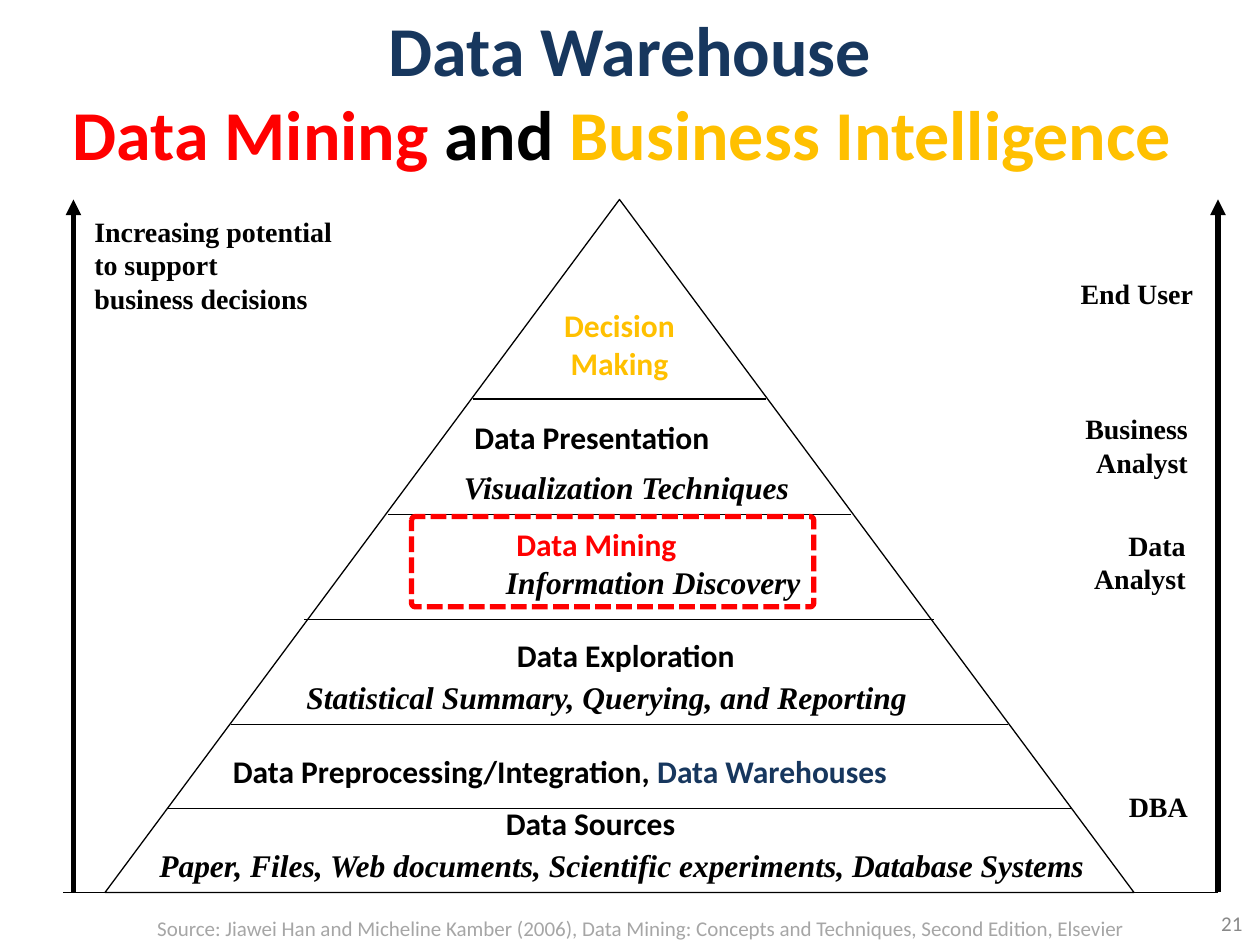
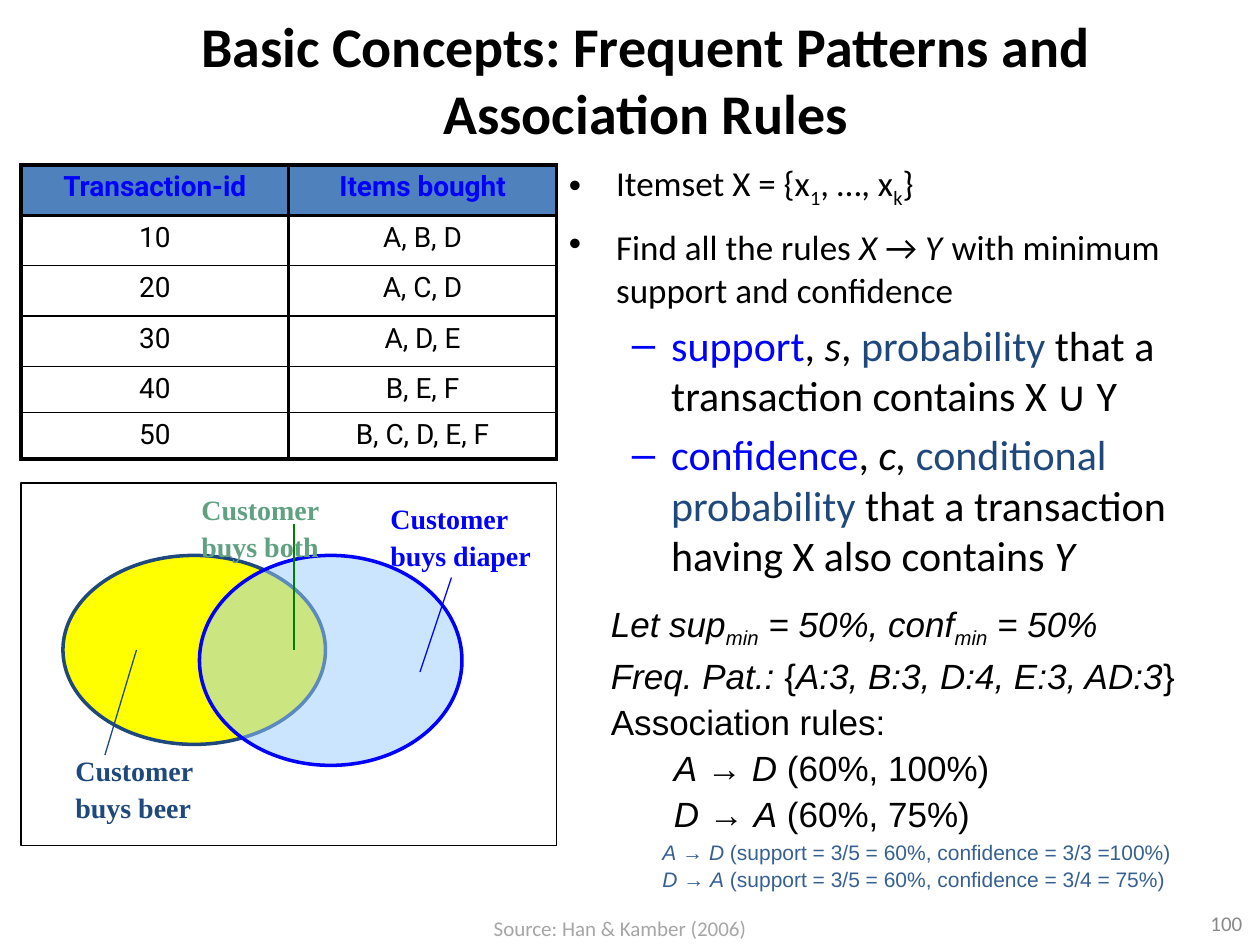
"""Build two slides on data mining: the decision pyramid and the association rules."""
from dataclasses import dataclass, field
from typing import Any, NamedTuple

from lxml import etree
from pptx import Presentation
from pptx.dml.color import RGBColor
from pptx.enum.dml import MSO_LINE
from pptx.enum.shapes import MSO_CONNECTOR, MSO_SHAPE
from pptx.enum.text import MSO_ANCHOR, PP_ALIGN
from pptx.oxml.ns import qn
from pptx.util import Inches, Pt

LEFT, CENTER, RIGHT = PP_ALIGN.LEFT, PP_ALIGN.CENTER, PP_ALIGN.RIGHT
TOP, MIDDLE = MSO_ANCHOR.TOP, MSO_ANCHOR.MIDDLE
STRAIGHT, DASHED = MSO_CONNECTOR.STRAIGHT, MSO_LINE.SQUARE_DOT
TRIANGLE, ELLIPSE = MSO_SHAPE.FLOWCHART_EXTRACT, MSO_SHAPE.OVAL
RECTANGLE, ROUNDED = MSO_SHAPE.RECTANGLE, MSO_SHAPE.ROUNDED_RECTANGLE

WIDTH, HEIGHT = Inches(10), Inches(7.5)
COLUMNS, ROWS = 120, 90
BLACK, RED, BLUE, GOLD = "000000", "FF0000", "0000FF", "FFC000"
NAVY, SLATE, GREEN, SAGE = "17375E", "1F497D", "008000", "5FA180"
STEEL, HEADER, YELLOW, SKY = "376092", "4F81BD", "FFFF00", "99CCFF"
NUMBER_GREY, SOURCE_GREY = "898989", "A6A6A6"

TITLE = {"name": "Calibri", "bold": True, "color": BLACK}
STAGE = {**TITLE, "size": Pt(18)}
DETAIL = {**STAGE, "name": "Times New Roman", "italic": True}
ROLE = {**DETAIL, "italic": False, "size": Pt(16)}
BODY = {"name": "Calibri", "size": Pt(24), "color": BLACK}
SMALL = {"size": Pt(20)}
FORMULA = {"name": "Arial", "size": Pt(20), "color": BLACK}
FOOTER = {"name": "Calibri", "size": Pt(12)}
LOOSE = {"line_spacing": 1.1}
SPACED = {"space_before": Pt(5)}


class Box(NamedTuple):
    """A place on the grid, in columns and rows."""
    left: float
    top: float
    width: float
    height: float


class Run(NamedTuple):
    """A stretch of text and what differs from the style of its box."""
    text: str
    format: dict[str, Any] = {}


@dataclass
class Line:
    """A paragraph with its layout; margin and indent are in columns."""
    runs: list[Run]
    format: dict[str, Any] = field(default_factory=dict)
    margin: float = 0
    indent: float = 0
    bullet: str = ""


@dataclass
class Label:
    """A text box whose lines share one style."""
    box: Box
    lines: list[Line]
    style: dict[str, Any]
    alignment: Any = LEFT
    anchor: Any = TOP


@dataclass
class Figure:
    """A preset shape with its outline and optional fill."""
    kind: Any
    box: Box
    line: str = BLACK
    weight: float = 0.75
    fill: str = ""
    opacity: int = 100


def column(count: float) -> int:
    """Return the width of a number of grid columns."""
    return round(WIDTH * count / COLUMNS)


def row(count: float) -> int:
    """Return the height of a number of grid rows."""
    return round(HEIGHT * count / ROWS)


def place(box: Box) -> tuple[int, int, int, int]:
    """Turn a grid box into slide lengths."""
    return column(box.left), row(box.top), column(box.width), row(box.height)


def paint(fill: Any, color: str) -> None:
    """Give a fill one solid colour."""
    fill.solid()
    fill.fore_color.rgb = RGBColor.from_string(color)


def mixed(source: str, base: dict[str, Any] = {}) -> list[Run]:
    """Split text into runs, where * encloses italics and _ encloses subscripts."""
    return [Run(text, {**base, "italic": bool(slant % 2), "baseline": -25000 * (drop % 2)})
            for slant, part in enumerate(source.split("*"))
            for drop, text in enumerate(part.split("_")) if text]


def plain(*texts: str, **layout: Any) -> list[Line]:
    """Make one unmixed line for each text."""
    return [Line([Run(text)], layout) for text in texts]


def write_run(paragraph: Any, run: Run, style: dict[str, Any]) -> None:
    """Add a run in the box style and its own format, or a line break."""
    if run.text == "\n":
        paragraph.add_line_break()
        return
    piece = paragraph.add_run()
    piece.text = run.text
    for name, value in {**style, **run.format}.items():
        if name == "color":
            paint(piece.font.fill, value)
        elif name == "baseline":
            piece._r.get_or_add_rPr().set(name, str(value))
        else:
            setattr(piece.font, name, value)


def write_lines(frame: Any, lines: list[Line], style: dict[str, Any], alignment: Any) -> None:
    """Fill a text frame with formatted lines."""
    for index, line in enumerate(lines):
        paragraph = frame.add_paragraph() if index else frame.paragraphs[0]
        for name, value in {"alignment": alignment, **line.format}.items():
            setattr(paragraph, name, value)
        properties = paragraph._p.get_or_add_pPr()
        properties.set("marL", str(column(line.margin)))
        properties.set("indent", str(column(line.indent)))
        if line.bullet:
            etree.SubElement(properties, qn("a:buFont"), typeface="Arial")
            etree.SubElement(properties, qn("a:buChar"), char=line.bullet)
        for run in line.runs:
            write_run(paragraph, run, style)


def draw_label(slide: Any, label: Label) -> None:
    """Draw a text box."""
    frame = slide.shapes.add_textbox(*place(label.box)).text_frame
    frame.word_wrap, frame.vertical_anchor = True, label.anchor
    write_lines(frame, label.lines, label.style, label.alignment)


def draw_figure(slide: Any, figure: Figure) -> Any:
    """Draw a preset shape and return it."""
    shape = slide.shapes.add_shape(figure.kind, *place(figure.box))
    shape.shadow.inherit = False
    shape.fill.background()
    if figure.fill:
        paint(shape.fill, figure.fill)
        tint = shape._element.spPr.find(".//" + qn("a:srgbClr"))
        etree.SubElement(tint, qn("a:alpha"), val=str(figure.opacity * 1000))
    paint(shape.line.fill, figure.line)
    shape.line.width = Pt(figure.weight)
    return shape


def draw_stroke(slide: Any, start: tuple[float, float], end: tuple[float, float],
                color: str = BLACK, weight: float = 0.75, arrow: bool = False) -> None:
    """Draw a straight line, with an arrowhead at its end if asked."""
    connector = slide.shapes.add_connector(
        STRAIGHT, column(start[0]), row(start[1]), column(end[0]), row(end[1]))
    paint(connector.line.fill, color)
    connector.line.width = Pt(weight)
    if arrow:
        etree.SubElement(connector.line._get_or_add_ln(), qn("a:tailEnd"), type="triangle")
    etree.SubElement(connector._element.spPr, qn("a:effectLst"))


def draw_frame(slide: Any, title: Label, number: str, source: str, source_left: float) -> None:
    """Draw the title, the slide number and the source line."""
    number_style, source_style = ({**FOOTER, "color": grey} for grey in (NUMBER_GREY, SOURCE_GREY))
    for label in (title, Label(Box(91.5, 85.5, 28, 4.8), plain(number), number_style, RIGHT, MIDDLE),
                  Label(Box(source_left, 86.6, 98.5, 3.6), plain(source), source_style, CENTER)):
        draw_label(slide, label)


def draw_table(slide: Any, box: Box, records: list[tuple[str, str]], heights: list[float]) -> None:
    """Draw the transactions with heavy rules around the header and the table."""
    table = slide.shapes.add_table(len(records), len(records[0]), *place(box)).table
    for index, (record, height) in enumerate(zip(records, heights)):
        table.rows[index].height = row(height)
        top, bottom = (2.25 if rule in (0, 1, len(records)) else 1 for rule in (index, index + 1))
        style = {"name": "Roboto", "size": Pt(16), "bold": index == 0, "color": BLACK if index else BLUE}
        for cell, text in zip(table.rows[index].cells, record):
            properties = cell._tc.get_or_add_tcPr()
            for side, weight in {"L": 2.25, "R": 2.25, "T": top, "B": bottom}.items():
                border = etree.SubElement(properties, qn("a:ln" + side), w=str(Pt(weight)))
                etree.SubElement(etree.SubElement(border, qn("a:solidFill")), qn("a:srgbClr"), val=BLACK)
            cell.fill.background()
            if index == 0:
                paint(cell.fill, HEADER)
            write_lines(cell.text_frame, plain(text), style, CENTER)


def build_pyramid(slide: Any) -> None:
    """Build the pyramid from data sources up to decisions."""
    title = Line([Run("Data Warehouse", {"color": NAVY}), Run("\n"), Run("Data Mining ", {"color": RED}),
                  Run("and "), Run("Business Intelligence ", {"color": GOLD})])
    draw_frame(slide, Label(Box(3, 2.5, 114, 12.2), [title], {**TITLE, "size": Pt(40)}, CENTER, MIDDLE),
               "21", "Source: Jiawei Han and Micheline Kamber (2006), Data Mining: "
               "Concepts and Techniques, Second Edition, Elsevier", 11.8)
    pyramid = Box(10, 19, 98, 66)
    base = pyramid.top + pyramid.height
    apex = pyramid.left + pyramid.width / 2
    draw_figure(slide, Figure(TRIANGLE, pyramid))
    for level in (77, 69, 59, 49, 38):
        half = (level - pyramid.top) / pyramid.height * pyramid.width / 2
        draw_stroke(slide, (round(apex - half), level), (round(apex + half), level))
    for axis in (7, 116):
        draw_stroke(slide, (axis, base), (axis, pyramid.top), weight=3, arrow=True)
    draw_stroke(slide, (6, base), (116, base))

    support = plain("Increasing potential", "to support", "business decisions")
    draw_label(slide, Label(Box(7.8, 19.8, 26, 10.8), support, ROLE))
    for right, top, role in ((114.8, 25.7, ["End User"]), (114.3, 38.6, ["Business", "Analyst"]),
                             (114.1, 49.7, ["Data", "Analyst"]), (114.3, 74.6, ["DBA"])):
        draw_label(slide, Label(Box(right - 15, top, 15, 4 * len(role)), plain(*role), ROLE, RIGHT))
    for box, text, style in (
            (Box(44, 39.2, 30, 4.8), "Data Presentation", STAGE),
            (Box(43, 44, 35, 4.8), "Visualization Techniques", DETAIL),
            (Box(48, 49.4, 23.4, 4.8), "Data Mining", {**STAGE, "color": RED}),
            (Box(47, 53, 31, 4.8), "Information Discovery", DETAIL),
            (Box(28, 64, 60, 4.8), "Statistical Summary, Querying, and Reporting", DETAIL),
            (Box(47, 76, 23, 4.8), "Data Sources", STAGE),
            (Box(14, 80, 93.4, 4.8),
             "Paper, Files, Web documents, Scientific experiments, Database Systems", DETAIL)):
        draw_label(slide, Label(box, plain(text), style))
    decision = {**STAGE, "color": GOLD}
    draw_label(slide, Label(Box(51, 28.6, 16, 8.4), plain("Decision Making"), decision, CENTER))
    draw_label(slide, Label(Box(44.2, 60, 30.8, 4.8), plain("Data Exploration"), STAGE, CENTER))
    warehouses = [Run("Data Preprocessing/Integration, "), Run("Data Warehouses", {"color": NAVY})]
    draw_label(slide, Label(Box(21, 71, 66, 4.8), [Line(warehouses)], STAGE))
    highlight = draw_figure(slide, Figure(ROUNDED, Box(39.2, 49.2, 38.3, 8.6), RED, 3))
    highlight.adjustments[0] = 0.04
    highlight.line.dash_style = DASHED


def build_rules(slide: Any) -> None:
    """Build the table, the Venn diagram and the definitions."""
    title = plain("Basic Concepts: Frequent Patterns and Association Rules")
    draw_frame(slide, Label(Box(9, 1.5, 105, 12), title, {**TITLE, "size": Pt(32)}, CENTER, MIDDLE),
               "100", "Source: Han & Kamber (2006)", 9.8)
    blue, slate = {"color": BLUE}, {"color": SLATE}
    bullet = {"margin": 4.5, "indent": -4.5, "bullet": "•"}
    dash = {"margin": 9.75, "indent": -3.75, "bullet": "–"}
    definitions = [
        Line(mixed("Itemset X = {x_1_, …, x_k_}", SMALL), **bullet),
        Line([*mixed("Find all the rules *X* → *Y*", SMALL), Run(" "),
              Run("with minimum support and confidence", SMALL)], SPACED, **bullet),
        Line([Run("support", blue), *mixed(", *s*, "), Run("probability", slate),
              Run(" that a transaction contains X ∪ Y")], SPACED, **dash),
        Line([Run("confidence", blue), *mixed(", *c,* "), Run("conditional probability", slate),
              *mixed(" that a transaction having X also contains *Y*")], SPACED, **dash)]
    results = [Line(mixed(text), LOOSE, margin) for text, margin in (
        ("*Let sup_min_ = 50%, conf_min_ = 50%*", 0),
        ("*Freq. Pat.:* {*A:3, B:3, D:4, E:3, AD:3*}", 0), ("Association rules:", 0),
        ("*A* → *D* (60%, 100%)", 6), ("*D* → *A* (60%, 75%)", 6))]
    workings = [Line(mixed(text), LOOSE) for text in (
        "*A* → *D* (support = 3/5 = 60%, confidence = 3/3 =100%)",
        "*D* → *A* (support = 3/5 = 60%, confidence = 3/4 = 75%)")]
    for box, lines, style in ((Box(53, 14.8, 65, 42), definitions, BODY),
                              (Box(57, 56.3, 60, 22), results, FORMULA),
                              (Box(61.9, 79.1, 55.8, 6.2), workings,
                               {**FORMULA, "size": Pt(12), "color": STEEL})):
        draw_label(slide, Label(box, lines, style))

    for figure in (Figure(ELLIPSE, Box(6, 52.9, 25, 18), SLATE, 2, YELLOW),
                   Figure(ELLIPSE, Box(19, 52.9, 25, 20), BLUE, 2, SKY, 50),
                   Figure(RECTANGLE, Box(2, 46, 51, 34.5))):
        draw_figure(slide, figure)
    for left, top, purchase, color, start, end, stroke in (
            (36, 46.9, "buys diaper", BLUE, (40, 64), (43, 55), BLUE),
            (18, 46, "buys both", SAGE, (28, 61.9), (28, 49.9), GREEN),
            (6, 70.9, "buys beer", SLATE, (13, 61.9), (10, 71.9), SLATE)):
        draw_stroke(slide, start, end, stroke)
        draw_label(slide, Label(Box(left, top, 16.5, 8.3), plain("Customer", purchase, **LOOSE),
                                {**ROLE, "color": color}))
    records = [("Transaction-id", "Items bought"), ("10", "A, B, D"), ("20", "A, C, D"),
               ("30", "A, D, E"), ("40", "B, E, F"), ("50", "B, C, D, E, F")]
    draw_table(slide, Box(2, 15.7, 51, 28), records, [4.8] * 4 + [4.4] * 2)


presentation = Presentation()
presentation.slide_width, presentation.slide_height = WIDTH, HEIGHT
for build in (build_pyramid, build_rules):
    build(presentation.slides.add_slide(presentation.slide_layouts[6]))
presentation.save("out.pptx")
